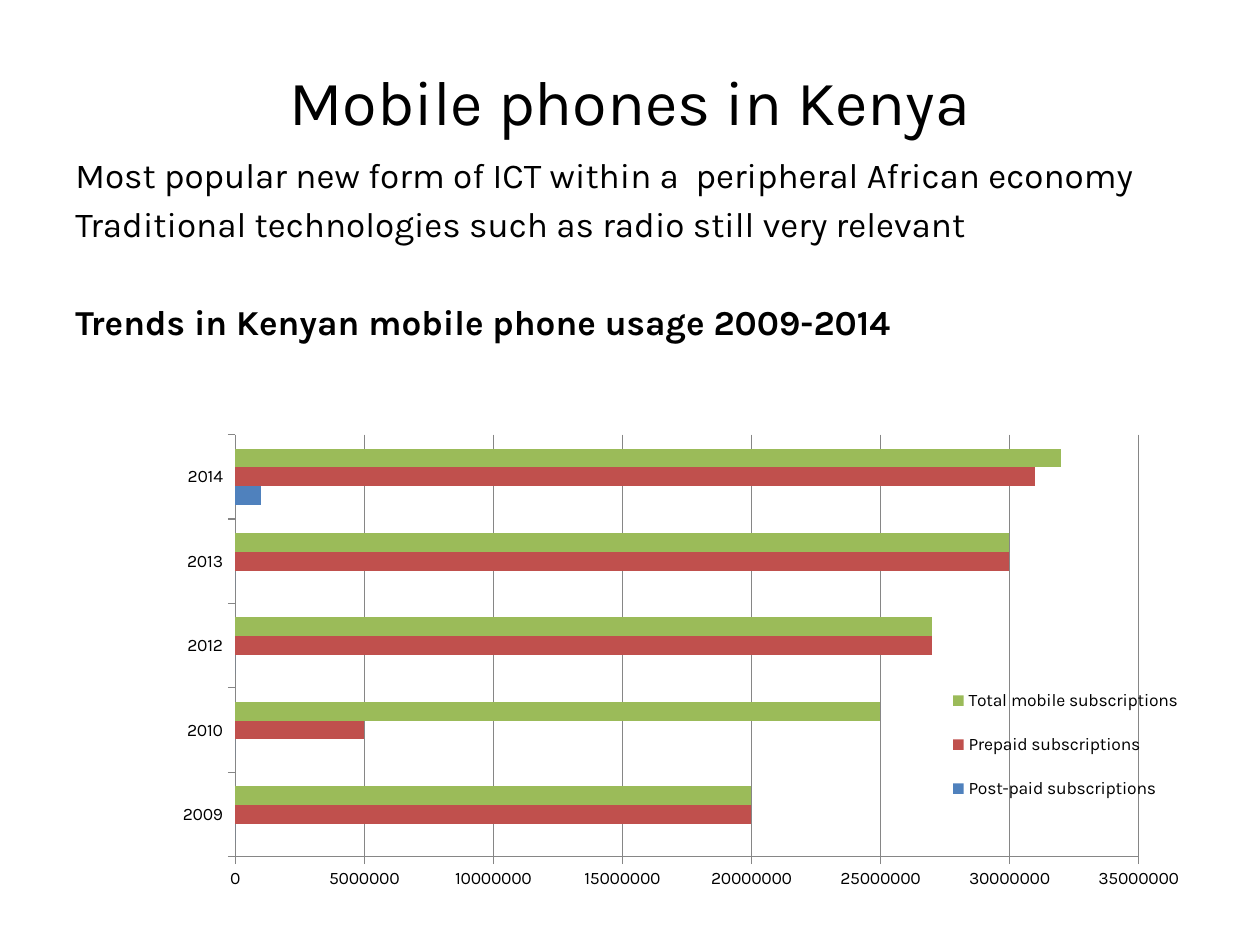
from lxml.etree import SubElement
from pptx import Presentation
from pptx.chart.data import CategoryChartData
from pptx.dml.color import RGBColor
from pptx.enum.chart import XL_CHART_TYPE as ChartType, XL_LEGEND_POSITION as LegendPosition
from pptx.enum.chart import XL_TICK_MARK as TickMark
from pptx.enum.text import MSO_ANCHOR as Anchor, PP_ALIGN as Align
from pptx.oxml.ns import qn
from pptx.util import Inches, Pt

# Content
TITLE = "Mobile phones in Kenya"
BODY = [  # text, bold, space before in points
    ("Most popular new form of ICT within a  peripheral African economy", False, 4.2),
    ("Traditional technologies such as radio still very relevant", False, 4.2),
    ("Trends in Kenyan mobile phone usage 2009-2014", True, 31.6),
]
YEARS = ["2009", "2010", "2012", "2013", "2014"]
MILLION = 1_000_000
SERIES = [  # name, colour, millions of subscriptions
    ("Post-paid subscriptions", "blue", [0, 0, 0, 0, 1]),
    ("Prepaid subscriptions", "red", [20, 5, 27, 30, 31]),
    ("Total mobile subscriptions", "green", [20, 25, 27, 30, 32]),
]
COLORS = {"text": "000000", "line": "868686",
          "blue": "4F81BD", "red": "C0504D", "green": "9BBB59"}
FONT = "Karla"

# Layout: left, top, width, height as shares of the slide or of the chart
WIDTH, HEIGHT = 10, 7.5
CHART_WIDTH, CHART_HEIGHT = 8.67, 4
TITLE_BOX = (0.05, 0.17 / HEIGHT, 0.9, 1.25 / HEIGHT)
BODY_BOX = (0.05, 1.17 / HEIGHT, 0.9, 5.53 / HEIGHT)
CHART_BOX = (0.1, 3.25 / HEIGHT, CHART_WIDTH / WIDTH, CHART_HEIGHT / HEIGHT)
PLOT_AREA = (0.1, 0.05, 7.17 / CHART_WIDTH, 3.35 / CHART_HEIGHT)
LEGEND_AREA = (0.75, 0.51, 0.22, 0.31)


def color(name):
    return RGBColor.from_string(COLORS[name])


def place(box):
    return [Inches(share * side) for share, side in zip(box, (WIDTH, HEIGHT) * 2)]


def format_font(font, size, bold=False):
    font.name, font.size, font.bold = FONT, Pt(size), bold
    font.color.rgb = color("text")


def add_text(slide, box, paragraphs, size, align=Align.LEFT, anchor=Anchor.TOP):
    frame = slide.shapes.add_textbox(*place(box)).text_frame
    frame.word_wrap, frame.vertical_anchor = True, anchor
    for index, (text, bold, space) in enumerate(paragraphs):
        paragraph = frame.paragraphs[0] if index == 0 else frame.add_paragraph()
        paragraph.alignment, paragraph.space_before = align, Pt(space)
        run = paragraph.add_run()
        run.text = text
        format_font(run.font, size, bold)


def set_layout(element, position, area, inner=False):
    """Fix a chart part at shares of the chart's size."""
    for old in element.findall(qn("c:layout")):
        element.remove(old)
    layout = SubElement(element, qn("c:layout"))
    element.insert(position, layout)
    manual = SubElement(layout, qn("c:manualLayout"))
    entries = [("layoutTarget", "inner")] if inner else []
    entries += [("xMode", "edge"), ("yMode", "edge"), *zip("xywh", area)]
    for tag, value in entries:
        SubElement(manual, qn(f"c:{tag}")).set("val", str(value))


def add_bar_chart(slide):
    data = CategoryChartData(number_format="General")
    data.categories = YEARS
    for name, _, values in SERIES:
        data.add_series(name, [value * MILLION for value in values])
    chart = slide.shapes.add_chart(ChartType.BAR_CLUSTERED, *place(CHART_BOX), data).chart
    chart.has_title = False
    format_font(chart.font, 10)

    # Bars
    plot = chart.plots[0]
    plot.gap_width, plot.overlap, plot.vary_by_categories = 150, 0, False
    for series, (_, fill, _) in zip(plot.series, SERIES):
        series.format.fill.solid()
        series.format.fill.fore_color.rgb = color(fill)

    # Axes
    value_axis = chart.value_axis
    value_axis.minimum_scale, value_axis.maximum_scale = 0, 35 * MILLION
    value_axis.major_unit = 5 * MILLION
    value_axis.has_major_gridlines = True
    chart.category_axis.has_major_gridlines = False
    for axis in (value_axis, chart.category_axis):
        axis.major_tick_mark = TickMark.OUTSIDE
    for part in (value_axis, chart.category_axis, value_axis.major_gridlines):
        part.format.line.color.rgb = color("line")
        part.format.line.width = Pt(0.75)

    # Legend over the plot
    chart.has_legend = True
    chart.legend.position = LegendPosition.RIGHT
    chart.legend.include_in_layout = False
    format_font(chart.legend.font, 10)
    set_layout(chart.element.find(f".//{qn('c:plotArea')}"), 0, PLOT_AREA, inner=True)
    set_layout(chart.element.find(f".//{qn('c:legend')}"), 1, LEGEND_AREA)


def main():
    presentation = Presentation()
    presentation.slide_width, presentation.slide_height = Inches(WIDTH), Inches(HEIGHT)
    slide = presentation.slides.add_slide(presentation.slide_layouts[6])
    add_text(slide, TITLE_BOX, [(TITLE, False, 0)], size=36,
             align=Align.CENTER, anchor=Anchor.MIDDLE)
    add_text(slide, BODY_BOX, BODY, size=20)
    add_bar_chart(slide)
    presentation.save("out.pptx")


if __name__ == "__main__":
    main()
